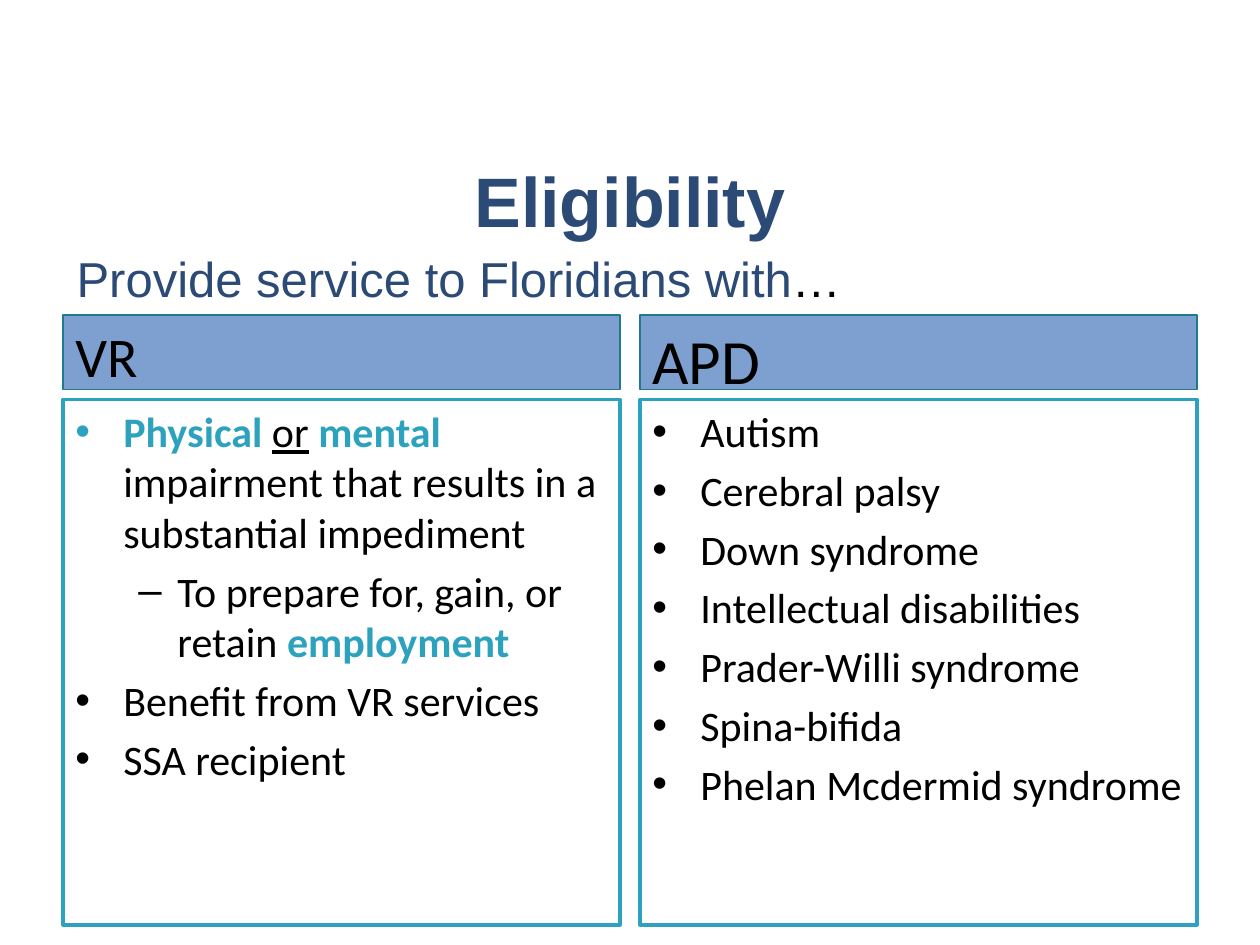
from lxml.etree import SubElement
from pptx import Presentation
from pptx.dml.color import RGBColor as RGB
from pptx.enum.shapes import MSO_SHAPE as SHAPE
from pptx.enum.text import MSO_ANCHOR as ANCHOR, PP_ALIGN as ALIGN
from pptx.oxml.ns import qn
from pptx.util import Inches, Pt

COLORS = {"navy": "2B4A76", "header": "7DA0D0", "header_line": "20798F",
          "teal": "2DA2BF", "black": "000000", "white": "FFFFFF"}
SLIDE_W, SLIDE_H = 10, 7.5
MARGIN, GAP = 0.5, 0.16
COL_W = (SLIDE_W - 2 * MARGIN - GAP) / 2
HEAD_H, HEAD_GAP = 0.59, 0.08
BULLETS = [("•", 0.38, 0.38), ("–", 0.81, 0.31)]  # mark, indent, hanging
KEY = {"bold": True, "color": "teal"}

# Each item is a level and its runs
VR_ITEMS = [
    (0, [("Physical ", KEY), ("or", {"underline": True}), (" ", {}), ("mental ", KEY),
         ("impairment that results in a substantial impediment", {})]),
    (1, [("To prepare for, gain, or retain ", {}), ("employment", KEY)]),
    (0, [("Benefit from VR services", {})]),
    (0, [("SSA recipient", {})]),
]
APD_ITEMS = [(0, [(name, {})]) for name in (
    "Autism", "Cerebral palsy", "Down syndrome", "Intellectual disabilities",
    "Prader-Willi syndrome", "Spina-bifida", "Phelan Mcdermid syndrome")]


def color(name):
    return RGB.from_string(COLORS[name])


def add_run(p, text, name="Calibri", size=24, color_name="black", **style):
    r = p.add_run()
    r.text = text
    r.font.color.rgb = color(style.pop("color", color_name))
    for key, value in {"name": name, "size": Pt(size), **style}.items():
        setattr(r.font, key, value)


def add_bullet(p, level):
    mark, indent, hanging = BULLETS[level]
    p.level = level
    pPr = p._p.get_or_add_pPr()
    pPr.set("marL", str(Inches(indent)))
    pPr.set("indent", str(-Inches(hanging)))
    SubElement(pPr, qn("a:buFont"), typeface="Arial")
    SubElement(pPr, qn("a:buChar"), char=mark)


def add_panel(slide, box, fill, line, width):
    """Draw a bordered rectangle and return its text frame."""
    sp = slide.shapes.add_shape(SHAPE.RECTANGLE, *map(Inches, box))
    sp.shadow.inherit = False
    sp.fill.solid()
    sp.fill.fore_color.rgb = color(fill)
    sp.line.color.rgb = color(line)
    sp.line.width = Pt(width)
    tf = sp.text_frame
    tf.word_wrap = True
    tf.vertical_anchor = ANCHOR.TOP
    tf.paragraphs[0].alignment = ALIGN.LEFT
    return tf


def add_column(slide, box, heading, heading_size, items):
    left, top, width, height = box
    tf = add_panel(slide, (left, top, width, HEAD_H), "header", "header_line", 0.75)
    add_run(tf.paragraphs[0], heading, size=heading_size)

    offset = HEAD_H + HEAD_GAP
    tf = add_panel(slide, (left, top + offset, width, height - offset), "white", "teal", 2)
    for i, (level, runs) in enumerate(items):
        p = tf.add_paragraph() if i else tf.paragraphs[0]
        p.alignment = ALIGN.LEFT
        if i:
            p.space_before = Pt(4.8)
        add_bullet(p, level)
        for text, style in runs:
            add_run(p, text, **style)


def add_title(slide, box, text):
    title = slide.shapes.title
    for key, value in zip(("left", "top", "width", "height"), box):
        setattr(title, key, Inches(value))
    tf = title.text_frame
    tf.vertical_anchor = ANCHOR.MIDDLE
    p = tf.paragraphs[0]
    p.alignment = ALIGN.CENTER
    add_run(p, text, "Arial", 40, "navy", bold=True)


def add_intro(slide, box):
    tf = slide.shapes.add_textbox(*map(Inches, box)).text_frame
    tf.word_wrap = True
    p = tf.paragraphs[0]
    add_run(p, "Provide service to Floridians with", "Arial", 28, "navy")
    add_run(p, "…", "Arial", 28)


def main():
    prs = Presentation()
    prs.slide_width, prs.slide_height = Inches(SLIDE_W), Inches(SLIDE_H)
    slide = prs.slides.add_slide(prs.slide_layouts[5])
    add_title(slide, (0, 1.25, SLIDE_W, 0.67), "Eligibility")
    columns = [("VR", 32, VR_ITEMS), ("APD", 36, APD_ITEMS)]
    for i, column in enumerate(columns):
        add_column(slide, (MARGIN + i * (COL_W + GAP), 2.5, COL_W, 4.84), *column)
    add_intro(slide, (0.51, 1.92, 9.25, 0.57))
    prs.save("out.pptx")


if __name__ == "__main__":
    main()
